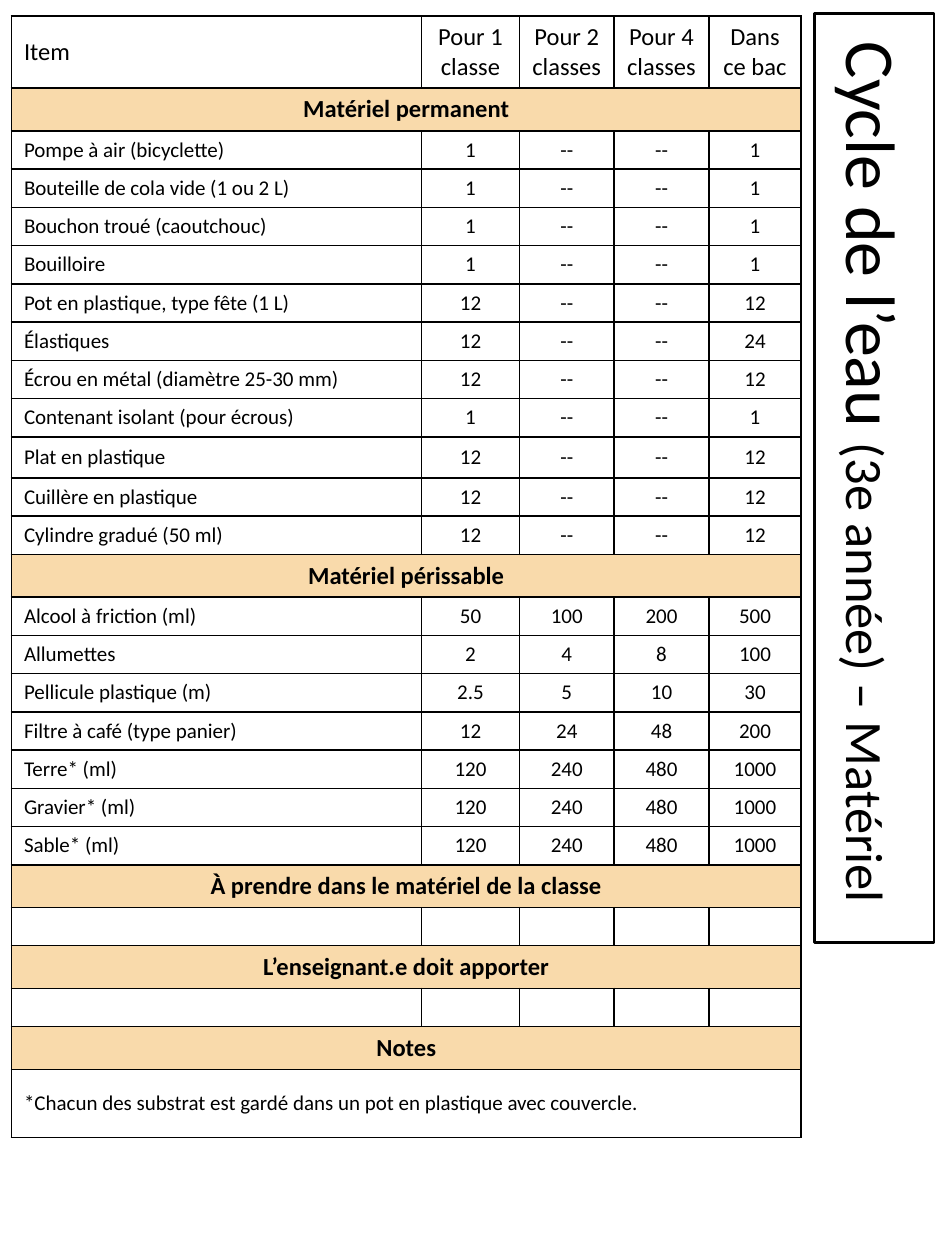
import pptx
import pptx.util
import pptx.dml.color
import pptx.enum.text
import pptx.oxml
import pptx.oxml.ns
from pptx.util import Cm

FONT = "Calibri"
BLACK = "000000"
SAND = "F9DAAB"
LEFT = pptx.enum.text.PP_ALIGN.LEFT
CENTER = pptx.enum.text.PP_ALIGN.CENTER
MIDDLE = pptx.enum.text.MSO_ANCHOR.MIDDLE

COLUMN_WIDTHS = [8.27, 1.97, 1.91, 1.91, 1.86]
HEADER_HEIGHT = 1.45
SECTION_HEIGHT = 0.86
ITEM_HEIGHT = 0.77
DISH_HEIGHT = 0.83
NOTE_HEIGHT = 1.37

HEADER = ["Item", "Pour 1 classe", "Pour 2 classes", "Pour 4 classes", "Dans ce bac"]
PERMANENT = [
    ("Pompe à air (bicyclette)", "1", "1"),
    ("Bouteille de cola vide (1 ou 2 L)", "1", "1"),
    ("Bouchon troué (caoutchouc)", "1", "1"),
    ("Bouilloire", "1", "1"),
    ("Pot en plastique, type fête (1 L)", "12", "12"),
    ("Élastiques", "12", "24"),
    ("Écrou en métal (diamètre 25-30 mm)", "12", "12"),
    ("Contenant isolant (pour écrous)", "1", "1"),
    ("Plat en plastique", "12", "12"),
    ("Cuillère en plastique", "12", "12"),
    ("Cylindre gradué (50 ml)", "12", "12"),
]
PERISHABLE = [
    ["Alcool à friction (ml)", "50", "100", "200", "500"],
    ["Allumettes", "2", "4", "8", "100"],
    ["Pellicule plastique (m)", "2.5", "5", "10", "30"],
    ["Filtre à café (type panier)", "12", "24", "48", "200"],
    ["Terre* (ml)", "120", "240", "480", "1000"],
    ["Gravier* (ml)", "120", "240", "480", "1000"],
    ["Sable* (ml)", "120", "240", "480", "1000"],
]
EMPTY = [""] * 5
NOTE = "*Chacun des substrat est gardé dans un pot en plastique avec couvercle."


def rgb(color):
    return pptx.dml.color.RGBColor.from_string(color)


def style_font(font, size, bold=False):
    font.name = FONT
    font.size = pptx.util.Pt(size)
    font.bold = bold
    font.color.rgb = rgb(BLACK)


def add_borders(cell):
    tc_pr = cell._tc.get_or_add_tcPr()
    for side in ("lnL", "lnR", "lnT", "lnB"):
        tc_pr.append(pptx.oxml.parse_xml(
            f'<a:{side} {pptx.oxml.ns.nsdecls("a")} w="12700"><a:solidFill>'
            f'<a:srgbClr val="{BLACK}"/></a:solidFill></a:{side}>'))


def fill_cell(cell, text, size, align, bold=False, fill=None):
    add_borders(cell)
    if fill:
        cell.fill.solid()
        cell.fill.fore_color.rgb = rgb(fill)
    else:
        cell.fill.background()
    cell.vertical_anchor = MIDDLE
    p = cell.text_frame.paragraphs[0]
    p.alignment = align
    style_font(p.font, size, bold)
    if text:
        p.add_run().text = text
    else:
        end = pptx.oxml.parse_xml(
            f'<a:endParaRPr {pptx.oxml.ns.nsdecls("a")} sz="{size * 100}"/>')
        p._p.append(end)


def fill_row(table, index, texts, size):
    for column, text in enumerate(texts):
        fill_cell(table.cell(index, column), text, size, CENTER if column else LEFT)


def fill_merged_row(table, index, text, size, align, bold=False, fill=None):
    table.cell(index, 0).merge(table.cell(index, 4))
    for column in range(5):
        fill_cell(table.cell(index, column), "" if column else text, size, align, bold, fill)


def table_rows():
    yield "header", HEADER, HEADER_HEIGHT
    yield "section", "Matériel permanent", SECTION_HEIGHT
    for name, per_class, in_bin in PERMANENT:
        height = DISH_HEIGHT if name == "Plat en plastique" else ITEM_HEIGHT
        yield "item", [name, per_class, "--", "--", in_bin], height
    yield "section", "Matériel périssable", SECTION_HEIGHT
    for texts in PERISHABLE:
        yield "item", texts, ITEM_HEIGHT
    for heading in ("À prendre dans le matériel de la classe", "L’enseignant.e doit apporter"):
        yield "section", heading, SECTION_HEIGHT
        yield "item", EMPTY, ITEM_HEIGHT
    yield "section", "Notes", SECTION_HEIGHT
    yield "note", NOTE, NOTE_HEIGHT


def add_material_table(s):
    rows = list(table_rows())
    height = sum(row[2] for row in rows)
    table = s.shapes.add_table(len(rows), 5, Cm(0.23), Cm(0.32),
                               Cm(sum(COLUMN_WIDTHS)), Cm(height)).table
    table.first_row = False
    table.horz_banding = False
    for column, width in zip(table.columns, COLUMN_WIDTHS):
        column.width = Cm(width)
    for index, (kind, content, row_height) in enumerate(rows):
        table.rows[index].height = Cm(row_height)
        if kind == "section":
            fill_merged_row(table, index, content, 14, CENTER, True, SAND)
        elif kind == "note":
            fill_merged_row(table, index, content, 12, LEFT)
        else:
            fill_row(table, index, content, 14 if kind == "header" else 12)


def format_title(s):
    sp = s.shapes.title
    sp.left, sp.top, sp.width, sp.height = Cm(8.26), Cm(8.43), Cm(18.72), Cm(2.41)
    sp.rotation = 90
    sp.line.color.rgb = rgb(BLACK)
    sp.line.width = pptx.util.Pt(1.5)
    tf = sp.text_frame
    tf.word_wrap = True
    tf.auto_size = pptx.enum.text.MSO_AUTO_SIZE.NONE
    tf.vertical_anchor = MIDDLE
    tf.margin_left = Cm(0.57)
    p = tf.paragraphs[0]
    p.alignment = LEFT
    for text, size in (("Cycle de l’eau ", 40), ("(3e année) – Matériel", 30)):
        r = p.add_run()
        r.text = text
        style_font(r.font, size)


def main():
    prs = pptx.Presentation()
    prs.slide_width, prs.slide_height = Cm(19.05), Cm(25.4)
    s = prs.slides.add_slide(prs.slide_layouts[5])
    format_title(s)
    add_material_table(s)
    prs.save("out.pptx")


if __name__ == "__main__":
    main()
